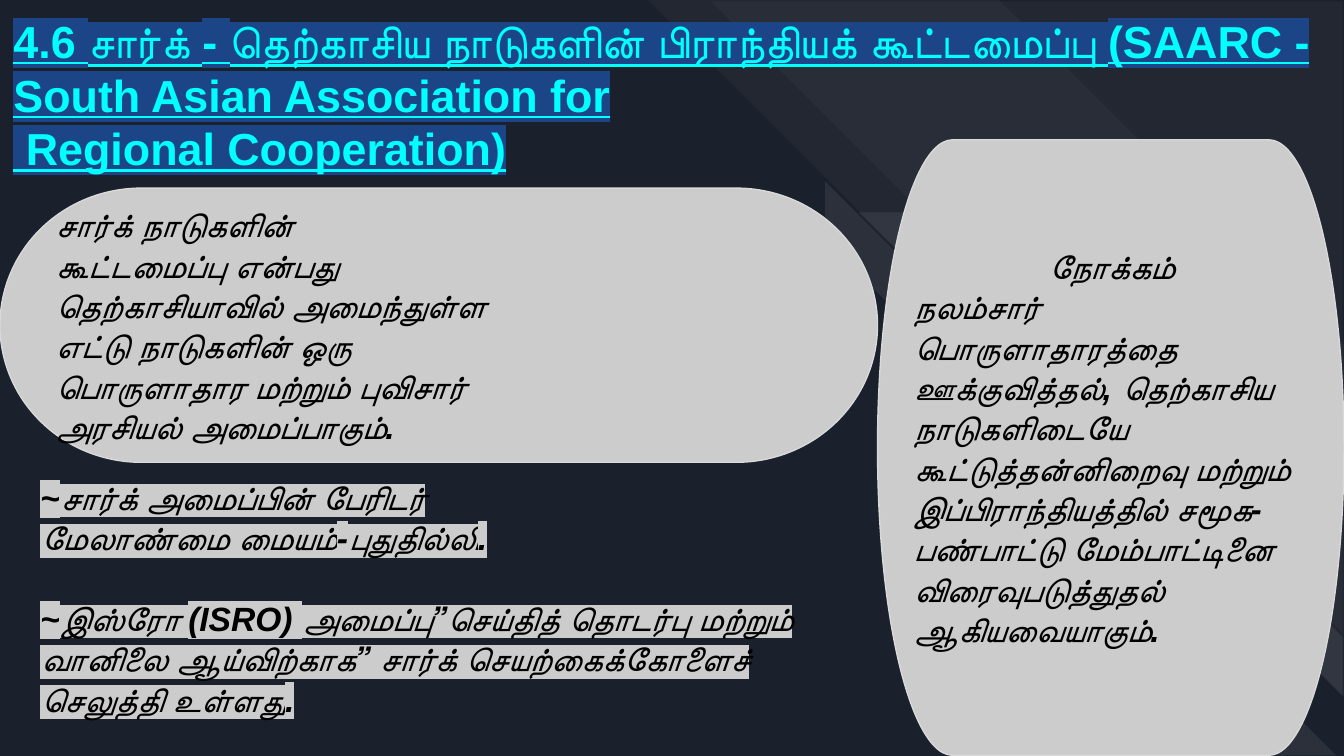
from dataclasses import dataclass

from lxml import etree
from pptx import Presentation
from pptx.dml.color import RGBColor
from pptx.enum.shapes import MSO_SHAPE
from pptx.enum.text import MSO_ANCHOR, MSO_AUTO_SIZE, PP_ALIGN
from pptx.oxml.ns import qn
from pptx.util import Inches, Pt

STRIPE = MSO_SHAPE.DIAGONAL_STRIPE
TERMINATOR = MSO_SHAPE.FLOWCHART_TERMINATOR
TOP, MIDDLE = MSO_ANCHOR.TOP, MSO_ANCHOR.MIDDLE
LEFT, CENTER = PP_ALIGN.LEFT, PP_ALIGN.CENTER
NO_AUTOFIT = MSO_AUTO_SIZE.NONE

COLORS = {
    "night": "1B212C", "white": "FFFFFF", "green": "82C7A5", "blue": "0145AC",
    "cyan": "00FFFF", "navy": "1C4587", "grey": "CCCCCC", "edge": "D9D9D9",
    "black": "000000",
}
FONT = "Arial"
SMALL = 0.88  # side of a small stripe
PAIR_STEP = (0.25, 0.23)  # from the turned stripe of a pair to the mirrored one


@dataclass
class Stripe:
    left: float
    top: float
    size: float = SMALL
    rotation: int = 270
    mirrored: bool = False
    bend: float = 0.5
    color: str = "white"
    opacity: int = 7


@dataclass
class TextStyle:
    size: int
    color: str
    italic: bool = False
    underline: bool = False
    highlight: str = ""


@dataclass
class Panel:
    left: float
    top: float
    width: float
    height: float
    lines: list[str]


TITLE_STYLE = TextStyle(24, "cyan", underline=True, highlight="navy")
PANEL_STYLE = TextStyle(18, "black", italic=True)
NOTE_STYLE = TextStyle(18, "black", italic=True, highlight="grey")

TITLE_LINES = [
    "4.6 சார்க் - தெற்காசிய நாடுகளின் பிராந்தியக் கூட்டமைப்பு (SAARC - South Asian Association for",
    " Regional Cooperation)",
]
DEFINITION = Panel(0, 1.4, 6.53, 2.04, [
    "சார்க் நாடுகளின்",
    "கூட்டமைப்பு என்பது",
    "தெற்காசியாவில் அமைந்துள்ள",
    "எட்டு நாடுகளின் ஒரு",
    "பொருளாதார மற்றும் புவிசார்",
    "அரசியல் அமைப்பாகும்.",
])
PURPOSE = Panel(6.53, 1.04, 3.47, 4.58, [
    "நோக்கம்",
    "நலம்சார் பொருளாதாரத்தை",
    "ஊக்குவித்தல், தெற்காசிய நாடுகளிடையே",
    "கூட்டுத்தன்னிறைவு மற்றும்",
    "இப்பிராந்தியத்தில் சமூக-பண்பாட்டு மேம்பாட்டினை விரைவுபடுத்துதல்",
    "ஆகியவையாகும்.",
])
NOTE_LINES = [
    "~சார்க் அமைப்பின் பேரிடர்",
    "மேலாண்மை மையம்-புதுதில்லி.",
    "~இஸ்ரோ (ISRO) அமைப்பு”செய்தித் தொடர்பு மற்றும் வானிலை ஆய்விற்காக” சார்க் செயற்கைக்கோளைச் செலுத்தி உள்ளது.",
]

# Left, top, colour of the turned stripe, colour of the mirrored stripe
STRIPE_PAIRS = [
    (6.14, 1.35, "white", "white"),
    (6.55, 2.7, "white", "white"),
    (7.3, 2.04, "white", "green"),
    (7.71, 3.38, "white", "white"),
    (7.9, 4.06, "blue", "white"),
    (8.86, 4.07, "white", "white"),
]
SINGLE_STRIPES = [
    Stripe(4.82, 0, 5.18, 90, bend=0.495, opacity=3),
    Stripe(5.29, 0.01, 4.7, 90, bend=0, opacity=3),
    Stripe(7.5, 2.71),
    Stripe(9.06, 4.74),
    Stripe(8.71, 2.95, rotation=0, mirrored=True),
    Stripe(8.91, 3.62, rotation=0, mirrored=True),
]


def rgb(name: str) -> RGBColor:
    return RGBColor.from_string(COLORS[name])


def draw_stripe(page, stripe: Stripe) -> None:
    side = Inches(stripe.size)
    shape = page.shapes.add_shape(STRIPE, Inches(stripe.left), Inches(stripe.top), side, side)
    shape.shadow.inherit = False
    shape.adjustments[0] = stripe.bend
    shape.rotation = stripe.rotation
    shape.line.fill.background()
    shape.fill.solid()
    shape.fill.fore_color.rgb = rgb(stripe.color)
    if stripe.mirrored:
        shape._element.spPr.find(qn("a:xfrm")).set("flipH", "1")
    if stripe.color == "white":
        color = shape._element.spPr.find(qn("a:solidFill")).find(qn("a:srgbClr"))
        etree.SubElement(color, qn("a:alpha")).set("val", str(stripe.opacity * 1000))


def write_lines(box, lines: list[str], style: TextStyle, anchor=TOP) -> None:
    frame = box.text_frame
    frame.word_wrap = True
    frame.auto_size = NO_AUTOFIT
    frame.vertical_anchor = anchor
    frame.margin_left = frame.margin_right = Inches(0.1)
    frame.margin_top = frame.margin_bottom = Inches(0.1)
    for index, line in enumerate(lines):
        para = frame.add_paragraph() if index else frame.paragraphs[0]
        para.alignment = LEFT
        font = para.font
        font.name, font.size, font.bold = FONT, Pt(style.size), True
        font.italic, font.underline = style.italic, style.underline
        font.color.rgb = rgb(style.color)
        span = para.add_run()
        span.text = line
        if style.highlight:
            marker = etree.SubElement(span._r.get_or_add_rPr(), qn("a:highlight"))
            etree.SubElement(marker, qn("a:srgbClr")).set("val", COLORS[style.highlight])


def draw_panel(page, panel: Panel):
    shape = page.shapes.add_shape(TERMINATOR, Inches(panel.left), Inches(panel.top),
                                  Inches(panel.width), Inches(panel.height))
    shape.shadow.inherit = False
    shape.fill.solid()
    shape.fill.fore_color.rgb = rgb("grey")
    shape.line.color.rgb = rgb("edge")
    shape.line.width = Pt(0.75)
    write_lines(shape, panel.lines, PANEL_STYLE, MIDDLE)
    return shape


def main() -> None:
    # Widescreen page, 16:9
    deck = Presentation()
    deck.slide_width = Inches(10)
    deck.slide_height = Inches(10 * 9 / 16)
    page = deck.slides.add_slide(deck.slide_layouts[5])
    page.background.fill.solid()
    page.background.fill.fore_color.rgb = rgb("night")

    # Background stripes
    for stripe in SINGLE_STRIPES:
        draw_stripe(page, stripe)
    for left, top, turned, mirrored in STRIPE_PAIRS:
        draw_stripe(page, Stripe(left, top, color=turned))
        draw_stripe(page, Stripe(left + PAIR_STEP[0], top + PAIR_STEP[1], rotation=0,
                                 mirrored=True, color=mirrored))

    # Title, raised above the stripes
    title = page.shapes.title
    title.left, title.top = Inches(0), Inches(0)
    title.width, title.height = Inches(10.25), Inches(1.4)
    write_lines(title, TITLE_LINES, TITLE_STYLE)
    page.shapes._spTree.append(title._element)

    # Definition and purpose panels
    draw_panel(page, DEFINITION)
    purpose = draw_panel(page, PURPOSE)
    purpose.text_frame.paragraphs[0].alignment = CENTER

    # Notes, with a one-line gap before the last
    notes = page.shapes.add_textbox(Inches(0.2), Inches(3.45), Inches(6.32), Inches(2.34))
    write_lines(notes, NOTE_LINES, NOTE_STYLE)
    notes.text_frame.paragraphs[-1].space_before = Pt(21.6)

    deck.save("out.pptx")


if __name__ == "__main__":
    main()
